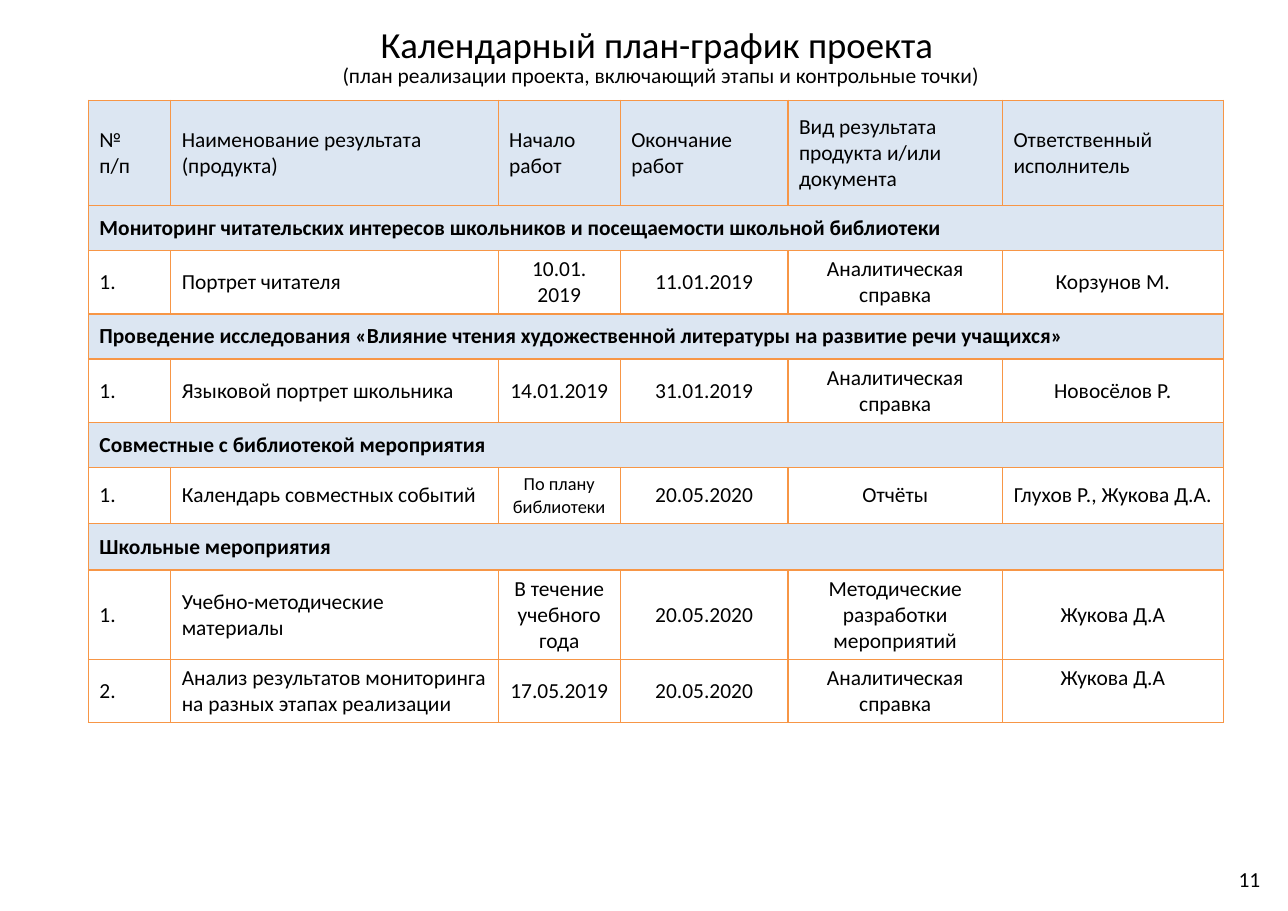
"""Build the calendar plan slide of a school library project."""
from dataclasses import dataclass

from lxml.etree import SubElement
from pptx import Presentation
from pptx.dml.color import RGBColor
from pptx.enum.text import MSO_ANCHOR, PP_ALIGN
from pptx.oxml.ns import qn
from pptx.util import Pt

FONT = "Calibri"
INK = "000000"
BAND = "DCE6F2"
RULE = "F79646"
BODY_SIZE = 14
COLUMN_WIDTHS = (53.8, 214, 79.8, 109.6, 140.2, 144.2)
FIRST_CENTRED_COLUMN = 2


@dataclass(frozen=True)
class PlanRow:
    height: float
    texts: tuple[str, ...]
    shaded: bool = False
    start_size: float = BODY_SIZE
    executor_anchor: MSO_ANCHOR = MSO_ANCHOR.MIDDLE

    @property
    def is_section(self) -> bool:
        return len(self.texts) == 1


@dataclass(frozen=True)
class Caption:
    left: float
    top: float
    width: float
    height: float
    lines: tuple[tuple[str, float], ...]
    align: PP_ALIGN
    line_spacing: float = 1.0


PLAN = (
    PlanRow(68.8, ("№\nп/п", "Наименование результата (продукта)", "Начало работ",
                   "Окончание работ", "Вид результата продукта и/или документа",
                   "Ответственный\nисполнитель"), shaded=True),
    PlanRow(29.5, ("Мониторинг читательских интересов школьников и посещаемости "
                   "школьной библиотеки",), shaded=True),
    PlanRow(41.4, ("1.", "Портрет читателя", "10.01.\n2019", "11.01.2019",
                   "Аналитическая справка", "Корзунов М.")),
    PlanRow(29.5, ("Проведение исследования «Влияние чтения художественной литературы "
                   "на развитие речи учащихся»",), shaded=True),
    PlanRow(41.4, ("1.", "Языковой портрет школьника", "14.01.2019", "31.01.2019",
                   "Аналитическая справка", "Новосёлов Р.")),
    PlanRow(29.5, ("Совместные с библиотекой мероприятия",), shaded=True),
    PlanRow(36.6, ("1.", "Календарь совместных событий", "По плану библиотеки",
                   "20.05.2020", "Отчёты", "Глухов Р., Жукова Д.А."), start_size=12),
    PlanRow(30.4, ("Школьные мероприятия",), shaded=True),
    PlanRow(58.4, ("1.", "Учебно-методические материалы", "В течение учебного года",
                   "20.05.2020", "Методические разработки мероприятий", "Жукова Д.А")),
    PlanRow(41.4, ("2.", "Анализ результатов мониторинга на разных этапах реализации",
                   "17.05.2019", "20.05.2020", "Аналитическая справка", "Жукова Д.А"),
            executor_anchor=MSO_ANCHOR.TOP),
)

CAPTIONS = (
    Caption(57.6, 20.2, 748.8, 35.3,
            (("Календарный план-график проекта ", 24),
             ("(план реализации проекта, включающий этапы и контрольные точки)", 14)),
            PP_ALIGN.CENTER, 0.85),
    Caption(635, 558.7, 196.6, 31.7, (("11", 14),), PP_ALIGN.RIGHT),
)


def color(hex_code: str) -> RGBColor:
    return RGBColor.from_string(hex_code)


def style_paragraph(paragraph, size: float, align: PP_ALIGN, bold: bool = False) -> None:
    paragraph.alignment = align
    for run in paragraph.runs:
        run.font.name = FONT
        run.font.size = Pt(size)
        run.font.bold = bold
        run.font.color.rgb = color(INK)


def draw_caption(slide, caption: Caption) -> None:
    frame = slide.shapes.add_textbox(Pt(caption.left), Pt(caption.top),
                                     Pt(caption.width), Pt(caption.height)).text_frame
    frame.word_wrap = True
    frame.vertical_anchor = MSO_ANCHOR.MIDDLE
    frame.margin_left = frame.margin_right = Pt(8)
    frame.margin_top = frame.margin_bottom = Pt(4)
    frame.text = "\n".join(text for text, _ in caption.lines)
    for paragraph, (_, size) in zip(frame.paragraphs, caption.lines):
        paragraph.line_spacing = caption.line_spacing
        style_paragraph(paragraph, size, caption.align)


def draw_borders(cell) -> None:
    properties = cell._tc.get_or_add_tcPr()
    for side in ("a:lnL", "a:lnR", "a:lnT", "a:lnB"):
        border = SubElement(properties, qn(side), w=str(Pt(1)))
        fill = SubElement(border, qn("a:solidFill"))
        SubElement(fill, qn("a:srgbClr"), val=RULE)


def fill_row(cells: list, row: PlanRow) -> None:
    for cell in cells:
        draw_borders(cell)
        if row.shaded:
            cell.fill.solid()
            cell.fill.fore_color.rgb = color(BAND)
        else:
            cell.fill.background()
        cell.vertical_anchor = MSO_ANCHOR.MIDDLE
    if row.is_section:
        cells[0].merge(cells[-1])
    for column, (cell, text) in enumerate(zip(cells, row.texts)):
        centred = column >= FIRST_CENTRED_COLUMN and not row.shaded
        size = row.start_size if column == FIRST_CENTRED_COLUMN else BODY_SIZE
        cell.text_frame.text = text
        for paragraph in cell.text_frame.paragraphs:
            style_paragraph(paragraph, size,
                            PP_ALIGN.CENTER if centred else PP_ALIGN.LEFT, row.is_section)
    cells[-1].vertical_anchor = row.executor_anchor


def draw_plan(slide) -> None:
    plan = slide.shapes.add_table(
        len(PLAN), len(COLUMN_WIDTHS), Pt(57.8), Pt(65.6),
        Pt(sum(COLUMN_WIDTHS)), Pt(sum(row.height for row in PLAN))).table
    plan.first_row = plan.horz_banding = False
    for column, width in zip(plan.columns, COLUMN_WIDTHS):
        column.width = Pt(width)
    for table_row, row in zip(plan.rows, PLAN):
        table_row.height = Pt(row.height)
        fill_row(list(table_row.cells), row)


def main() -> None:
    presentation = Presentation()
    presentation.slide_width = Pt(841.68)
    presentation.slide_height = Pt(595.44)
    slide = presentation.slides.add_slide(presentation.slide_layouts[6])
    for caption in CAPTIONS:
        draw_caption(slide, caption)
    draw_plan(slide)
    presentation.save("out.pptx")


if __name__ == "__main__":
    main()
